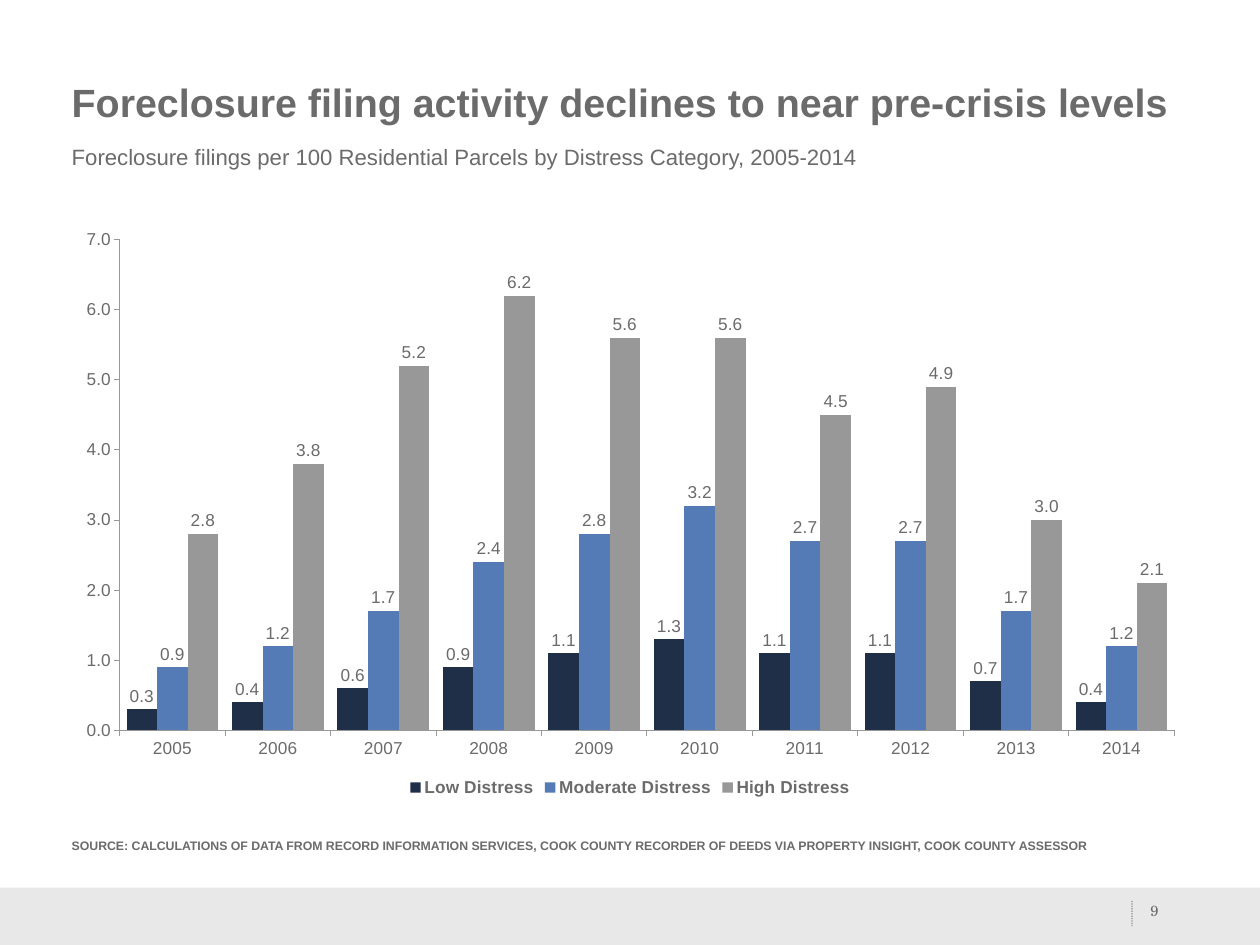
"""Build the foreclosure filing slide with its clustered column chart."""
from dataclasses import dataclass

from pptx import Presentation, util as u
from pptx.chart.data import CategoryChartData
from pptx.dml.color import RGBColor
from pptx.enum import chart as ch, dml, shapes, text
from pptx.oxml import parse_xml
from pptx.oxml.ns import nsdecls, qn


@dataclass(frozen=True)
class Theme:
    """Colours, fonts and type sizes."""
    ink: str = "6B6B6B"
    band: str = "E8E8E8"
    axis: str = "989898"
    bars: tuple = ("1F2F47", "547BB6", "989898")
    sans: str = "Arial"
    serif: str = "TeX Gyre Schola"
    title: int = 32
    sub: int = 18
    chart: int = 14
    page: int = 12
    note: int = 10


class Deck:
    """Draw on one slide, with lengths in columns and rows of a grid."""
    cols, rows = 20, 15

    def __init__(self, theme):
        """Open a blank slide."""
        self.theme = theme
        self.prs = Presentation()
        self.prs.slide_width = u.Inches(14.22)
        self.prs.slide_height = u.Inches(10.67)
        self.slide = self.prs.slides.add_slide(self.prs.slide_layouts[6])

    def grid(self, *nums):
        """Turn alternating columns and rows into lengths."""
        unit = (self.prs.slide_width / self.cols,
                self.prs.slide_height / self.rows)
        return [u.Emu(round(n * unit[i % 2])) for i, n in enumerate(nums)]

    def style(self, font, size, bold=False, face=None):
        """Set a font in the theme's ink."""
        font.name = face or self.theme.sans
        font.size = u.Pt(size)
        font.bold = bold
        font.color.rgb = RGBColor.from_string(self.theme.ink)

    def band(self, *box):
        """Add a plain filled bar."""
        bar = self.slide.shapes.add_shape(
            shapes.MSO_SHAPE.RECTANGLE, *self.grid(*box))
        bar.shadow.inherit = False
        bar.fill.solid()
        bar.fill.fore_color.rgb = RGBColor.from_string(self.theme.band)
        bar.line.fill.background()

    def rule(self, *ends):
        """Add a dotted, slightly clear line."""
        rule = self.slide.shapes.add_connector(
            shapes.MSO_CONNECTOR.STRAIGHT, *self.grid(*ends))
        rule.line.width = u.Pt(1)
        rule.line.color.rgb = RGBColor.from_string(self.theme.ink)
        rule.line.dash_style = dml.MSO_LINE.ROUND_DOT
        props = rule._element.spPr
        tint = next(props.iter(qn("a:srgbClr")))
        tint.append(parse_xml(f'<a:alpha {nsdecls("a")} val="75000"/>'))
        props.append(parse_xml(f'<a:effectLst {nsdecls("a")}/>'))

    def label(self, words, box, size, bold=False):
        """Add a one-paragraph text box and return its frame."""
        frame = self.slide.shapes.add_textbox(*self.grid(*box)).text_frame
        frame.word_wrap = True
        frame.text = words
        self.style(frame.paragraphs[0].font, size, bold)
        return frame

    def page(self, words, box):
        """Add the page number."""
        frame = self.label(words, box, self.theme.page)
        frame.margin_left = frame.margin_right = 0
        frame.margin_top = frame.margin_bottom = 0
        frame.vertical_anchor = text.MSO_ANCHOR.BOTTOM
        para = frame.paragraphs[0]
        para.alignment = text.PP_ALIGN.CENTER
        para.line_spacing = 1.5
        self.style(para.font, self.theme.page, face=self.theme.serif)

    def chart(self, cats, sets, box, area):
        """Add a column chart whose plot fills the given share of its box."""
        data = CategoryChartData(number_format="0.0")
        data.categories = cats
        for name, vals in sets.items():
            data.add_series(name, vals)
        chart = self.slide.shapes.add_chart(
            ch.XL_CHART_TYPE.COLUMN_CLUSTERED, *self.grid(*box), data).chart
        size = self.theme.chart
        self.style(chart.font, size)
        chart.has_title = False
        chart.has_legend = True
        chart.legend.position = ch.XL_LEGEND_POSITION.BOTTOM
        chart.legend.include_in_layout = False
        self.style(chart.legend.font, size, True)

        plot = chart.plots[0]
        plot.gap_width, plot.overlap = 45, 0
        plot.vary_by_categories = False
        plot.has_data_labels = True
        tags = plot.data_labels
        tags.show_value = True
        tags.number_format, tags.number_format_is_linked = "0.0", False
        tags.position = ch.XL_LABEL_POSITION.OUTSIDE_END
        self.style(tags.font, size)
        for row, hue in zip(plot.series, self.theme.bars):
            row.format.fill.solid()
            row.format.fill.fore_color.rgb = RGBColor.from_string(hue)

        for axis in (chart.category_axis, chart.value_axis):
            axis.has_major_gridlines = False
            axis.major_tick_mark = ch.XL_TICK_MARK.OUTSIDE
            axis.minor_tick_mark = ch.XL_TICK_MARK.NONE
            axis.format.line.width = u.Pt(0.75)
            axis.format.line.color.rgb = RGBColor.from_string(self.theme.axis)
            self.style(axis.tick_labels.font, size)
        axis.minimum_scale, axis.maximum_scale = 0, 7
        axis.major_unit = 1
        axis.tick_labels.number_format = "0.0"
        axis.tick_labels.number_format_is_linked = False
        self.place(chart, area)

    def place(self, chart, area):
        """Fix the inner plot area as shares of the chart."""
        host = chart._chartSpace.chart.plotArea
        for old in host.findall(qn("c:layout")):
            host.remove(old)
        modes = "".join(f'<c:{k}Mode val="edge"/>' for k in "xy")
        sides = "".join(f'<c:{k} val="{v}"/>' for k, v in zip("xywh", area))
        host.insert(0, parse_xml(
            f'<c:layout {nsdecls("c")}><c:manualLayout>'
            f'<c:layoutTarget val="inner"/>{modes}{sides}'
            f'</c:manualLayout></c:layout>'))


def main():
    """Compose and save the slide."""
    theme = Theme()
    deck = Deck(theme)
    deck.band(0, 14.09, 20, 0.91)
    deck.rule(17.97, 14.3, 17.97, 14.7)
    deck.label("Foreclosure filings per 100 Residential Parcels by Distress "
               "Category, 2005-2014", (1, 2.21, 18, 0.82), theme.sub)
    deck.page("9", (18.07, 13.79, 0.51, 0.8))
    deck.label("Foreclosure filing activity declines to near pre-crisis levels",
               (1, 1.17, 18, 1.04), theme.title, True)
    deck.label("SOURCE: CALCULATIONS OF DATA FROM RECORD INFORMATION SERVICES, "
               "COOK COUNTY RECORDER OF DEEDS VIA PROPERTY INSIGHT, "
               "COOK COUNTY ASSESSOR", (1, 13.24, 19, 0.84), theme.note, True)
    deck.chart(
        [str(year) for year in range(2005, 2015)],
        {"Low Distress": (0.3, 0.4, 0.6, 0.9, 1.1, 1.3, 1.1, 1.1, 0.7, 0.4),
         "Moderate Distress": (0.9, 1.2, 1.7, 2.4, 2.8,
                               3.2, 2.7, 2.7, 1.7, 1.2),
         "High Distress": (2.8, 3.8, 5.2, 6.2, 5.6, 5.6, 4.5, 4.9, 3.0, 2.1)},
        (1, 3.43, 18, 9.28), (0.05, 0.04, 0.93, 0.84))
    deck.prs.save("out.pptx")


if __name__ == "__main__":
    main()
